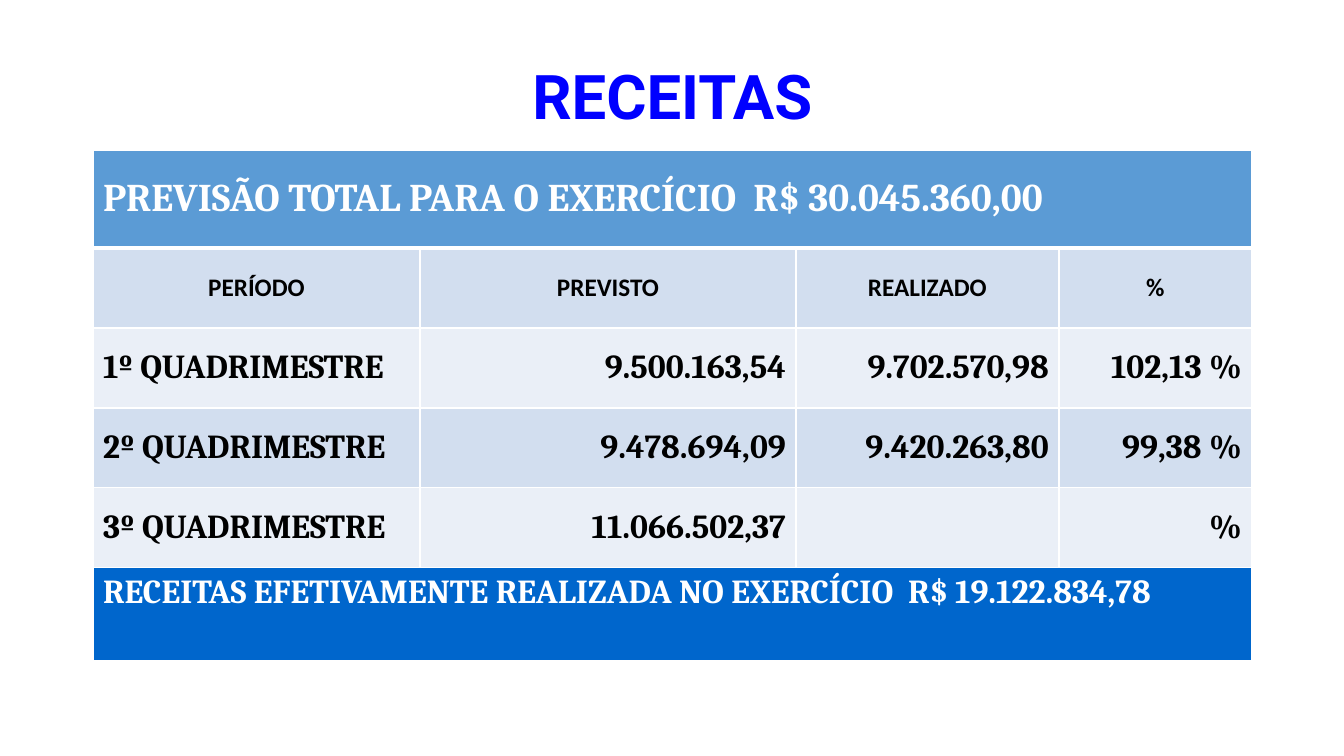
import pptx
import pptx.dml.color
import pptx.enum.text
import pptx.oxml
import pptx.oxml.ns
import pptx.util

SLIDE_WIDTH, SLIDE_HEIGHT = 1344, 756
EMU_PER_PX = 12192000 / SLIDE_WIDTH

ALIGN = pptx.enum.text.PP_ALIGN
ANCHOR = pptx.enum.text.MSO_ANCHOR

WHITE, BLACK, TITLE_BLUE = "FFFFFF", "000000", "0000FF"
HEADER_BLUE, TOTAL_BLUE = "5B9BD5", "0066CC"
BANDS = ["D2DEEF", "EAEFF7"]

COLUMN_WIDTHS = [327, 376, 263, 193]
ROW_HEIGHTS = [98, 80, 80, 80, 80, 93]
FORECAST = "PREVISÃO TOTAL PARA O EXERCÍCIO  R$ 30.045.360,00"
TOTAL = "RECEITAS EFETIVAMENTE REALIZADA NO EXERCÍCIO  R$ 19.122.834,78"
PERIODS = [
    ["PERÍODO", "PREVISTO", "REALIZADO", "%"],
    ["1º QUADRIMESTRE", "9.500.163,54", "9.702.570,98", "102,13 %"],
    ["2º QUADRIMESTRE", "9.478.694,09", "9.420.263,80", "99,38 %"],
    ["3º QUADRIMESTRE", "11.066.502,37", "", "%"],
]


def px(length):
    return pptx.util.Emu(round(length * EMU_PER_PX))


def color(code):
    return pptx.dml.color.RGBColor.from_string(code)


def write(para, text, font, size, ink, align):
    para.text = text
    para.alignment = align
    para.font.name = font
    para.font.size = pptx.util.Pt(size)
    para.font.bold = True
    para.font.color.rgb = color(ink)


def add_title(page, text):
    box = page.shapes.add_textbox(px(93), px(40), px(1159), px(119))
    frame = box.text_frame
    frame.word_wrap = True
    frame.vertical_anchor = ANCHOR.MIDDLE
    para = frame.paragraphs[0]
    write(para, text, "Roboto", 44, TITLE_BLUE, ALIGN.CENTER)
    para.line_spacing = 0.9


def set_borders(cell, bottom=1):
    properties = cell._tc.get_or_add_tcPr()
    widths = {"lnL": 1, "lnR": 1, "lnT": 1, "lnB": bottom}
    for position, (side, width) in enumerate(widths.items()):
        line = pptx.oxml.parse_xml(
            f'<a:{side} {pptx.oxml.ns.nsdecls("a")} w="{pptx.util.Pt(width)}">'
            f'<a:solidFill><a:srgbClr val="{WHITE}"/></a:solidFill></a:{side}>'
        )
        properties.insert(position, line)


def fill_cell(cell, text, fill, size, ink=BLACK, align=ALIGN.LEFT,
              font="Cambria", anchor=ANCHOR.MIDDLE):
    cell.fill.solid()
    cell.fill.fore_color.rgb = color(fill)
    cell.vertical_anchor = anchor
    write(cell.text_frame.paragraphs[0], text, font, size, ink, align)


def add_revenue_table(page):
    frame = page.shapes.add_table(
        len(ROW_HEIGHTS), len(COLUMN_WIDTHS), px(93), px(150),
        px(sum(COLUMN_WIDTHS)), px(sum(ROW_HEIGHTS)))
    table = frame.table
    table.first_row = False
    table.horz_banding = False
    for column, width in zip(table.columns, COLUMN_WIDTHS):
        column.width = px(width)
    for row, height in zip(table.rows, ROW_HEIGHTS):
        row.height = px(height)

    # Borders
    for index, row in enumerate(table.rows):
        for cell in row.cells:
            set_borders(cell, bottom=3 if index == 0 else 1)

    # Full-width rows
    last = len(ROW_HEIGHTS) - 1
    for index in (0, last):
        table.cell(index, 0).merge(table.cell(index, len(COLUMN_WIDTHS) - 1))
    fill_cell(table.cell(0, 0), FORECAST, HEADER_BLUE, 28, WHITE)
    fill_cell(table.cell(last, 0), TOTAL, TOTAL_BLUE, 24, WHITE,
              anchor=ANCHOR.TOP)

    # Column headings and the three periods
    for r, values in enumerate(PERIODS):
        for c, value in enumerate(values):
            cell = table.cell(r + 1, c)
            fill = BANDS[r % 2]
            if r == 0:
                fill_cell(cell, value, fill, 18, align=ALIGN.CENTER,
                          font="Calibri")
            else:
                align = ALIGN.RIGHT if c else ALIGN.LEFT
                fill_cell(cell, value, fill, 24, align=align)


def main():
    deck = pptx.Presentation()
    deck.slide_width = px(SLIDE_WIDTH)
    deck.slide_height = px(SLIDE_HEIGHT)
    page = deck.slides.add_slide(deck.slide_layouts[6])
    add_title(page, "RECEITAS")
    add_revenue_table(page)
    deck.save("out.pptx")


if __name__ == "__main__":
    main()
